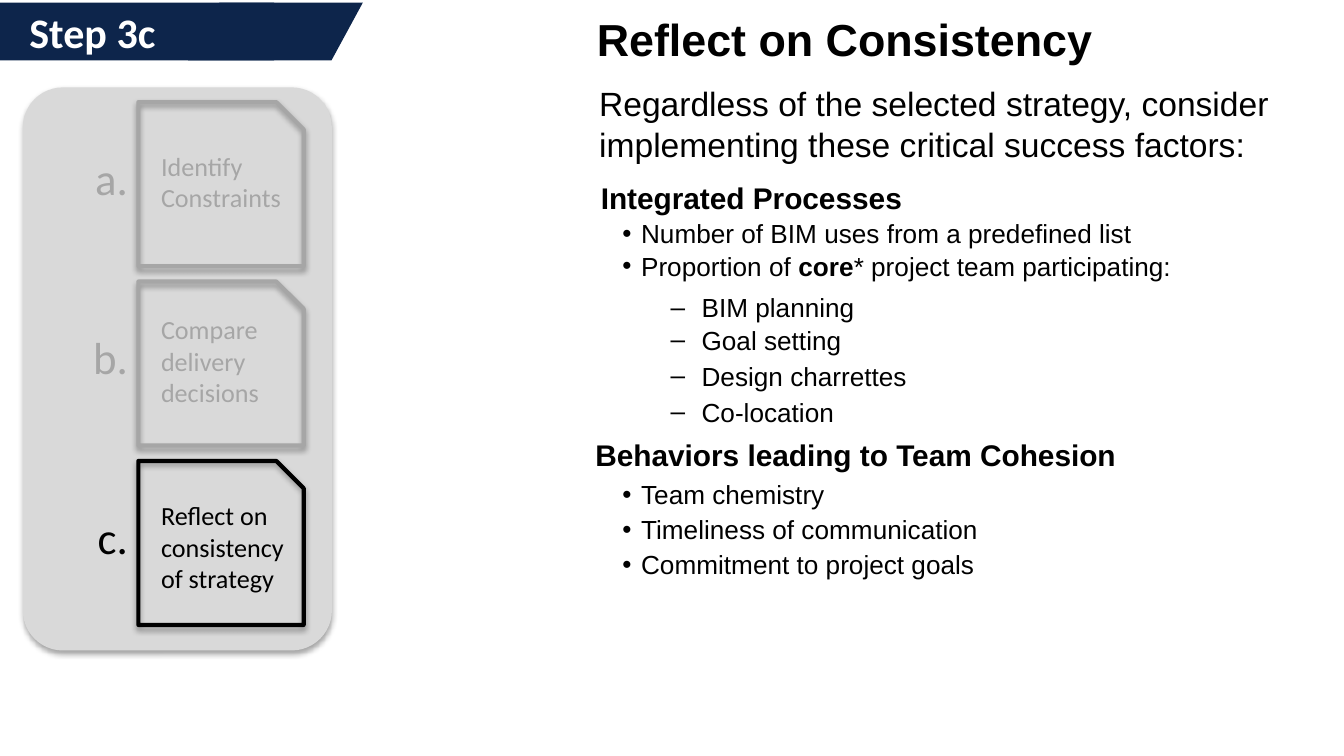
import collections
import dataclasses

import pptx
import pptx.dml.color
import pptx.enum.shapes
import pptx.enum.text
import pptx.oxml
import pptx.oxml.ns
import pptx.util
from pptx.util import Inches

SHAPE = pptx.enum.shapes.MSO_SHAPE
ALIGN = pptx.enum.text.PP_ALIGN
Box = collections.namedtuple("Box", "left top width height")


@dataclasses.dataclass(frozen=True)
class Theme:
    navy: str = "0D254B"
    white: str = "FFFFFF"
    black: str = "000000"
    panel: str = "D9D9D9"
    muted: str = "A6A6A6"
    content_font: str = "Arial"
    step_font: str = "Calibri"
    title: float = 24
    banner: float = 22.5
    intro: float = 18
    heading: float = 16
    small: float = 14
    outline: float = 2.25


THEME = Theme()


def rgb(value):
    return pptx.dml.color.RGBColor.from_string(value)


def inside(box, left, top, width, height):
    """Turn a position relative to box into one on the slide."""
    return Box(box.left + left, box.top + top, width, height)


def place(holder, box):
    holder.left, holder.top, holder.width, holder.height = map(Inches, box)


def write(paragraph, text, *, size, font=THEME.content_font, color=THEME.black,
          bold=False, align=ALIGN.LEFT, before=0, bullet=None, margin=0, hang=0):
    """Format a paragraph; parts of text between ** marks are bold."""
    properties = paragraph._p.get_or_add_pPr()
    properties.set("marL", str(Inches(margin)))
    properties.set("indent", str(-Inches(hang)))
    mark = f'a:buChar {pptx.oxml.ns.nsdecls("a")} char="{bullet}"' if bullet \
        else f'a:buNone {pptx.oxml.ns.nsdecls("a")}'
    properties.append(pptx.oxml.parse_xml(f"<{mark}/>"))
    paragraph.alignment = align
    paragraph.line_spacing = 1.0
    paragraph.space_before = pptx.util.Pt(before)
    paragraph.space_after = pptx.util.Pt(0)
    for number, part in enumerate(text.split("**")):
        run = paragraph.add_run()
        run.text = part
        run.font.name = font
        run.font.size = pptx.util.Pt(size)
        run.font.bold = bold or number % 2 == 1
        run.font.color.rgb = rgb(color)


def prepare(frame, wrap=True):
    frame.word_wrap = wrap
    frame.auto_size = pptx.enum.text.MSO_AUTO_SIZE.NONE
    frame.vertical_anchor = pptx.enum.text.MSO_ANCHOR.TOP
    return frame.paragraphs[0]


def add_text(slide, box, text, **style):
    holder = slide.shapes.add_textbox(*map(Inches, box))
    write(prepare(holder.text_frame), text, **style)


def fill_holder(holder, box, text, **style):
    place(holder, box)
    write(prepare(holder.text_frame, wrap=False), text, **style)


def add_panel(slide, kind, box, fill=None, line=None, adjust=None, shadow=False):
    shape = slide.shapes.add_shape(kind, *map(Inches, box))
    shape.shadow.inherit = False
    if fill:
        shape.fill.solid()
        shape.fill.fore_color.rgb = rgb(fill)
    else:
        shape.fill.background()
    if line:
        shape.line.color.rgb = rgb(line)
        shape.line.width = pptx.util.Pt(THEME.outline)
    else:
        shape.line.fill.background()
    if adjust is not None:
        shape.adjustments[0] = adjust
    if shadow:
        effects = shape._element.spPr.find(pptx.oxml.ns.qn("a:effectLst"))
        effects.append(pptx.oxml.parse_xml(
            f'<a:outerShdw {pptx.oxml.ns.nsdecls("a")} blurRad="{pptx.util.Pt(3.1)}" '
            f'dist="{pptx.util.Pt(1.8)}" dir="5400000" rotWithShape="0">'
            '<a:srgbClr val="000000"><a:alpha val="35000"/></a:srgbClr></a:outerShdw>'))


def add_banner(slide, box, text):
    add_panel(slide, SHAPE.RECTANGLE, inside(box, 0, 0, 2.04, box.height), THEME.navy)
    add_panel(slide, SHAPE.PARALLELOGRAM,
              inside(box, box.width - 1.3, 0, 1.3, box.height), THEME.navy, adjust=0.543)
    add_text(slide, inside(box, 0.12, -0.02, 2.05, 0.48), text, size=THEME.banner,
             font=THEME.step_font, color=THEME.white, bold=True)


def add_steps(slide, box, steps, current):
    """Stack one card per (letter, label, label offset) and highlight the current one."""
    add_panel(slide, SHAPE.ROUNDED_RECTANGLE, box, THEME.panel, adjust=0.13, shadow=True)
    card_height, top_gap, bottom_gap = 1.22, 0.11, 0.19
    pitch = (box.height - top_gap - bottom_gap - card_height) / (len(steps) - 1)
    for row, (letter, label, label_top) in enumerate(steps):
        card = inside(box, 0.86, top_gap + row * pitch, 1.23, card_height)
        color = THEME.black if letter == current else THEME.muted
        style = dict(font=THEME.step_font, color=color)
        add_panel(slide, SHAPE.SNIP_1_RECTANGLE, card, line=color, shadow=True)
        add_text(slide, inside(card, 0.07, label_top, 1.2, 0.81), label,
                 size=THEME.small, **style)
        add_text(slide, inside(card, -0.7, 0.31, 0.72, 0.5), letter,
                 size=THEME.title, align=ALIGN.RIGHT, **style)


def fill_section(heading_holder, list_holder, box, heading, items, list_top):
    """Place a heading and its list of (level, space before, text)."""
    fill_holder(heading_holder, inside(box, 0, 0, box.width, 0.37), heading,
                size=THEME.heading, bold=True)
    place(list_holder, Box(4.53, box.top + list_top, 5.34, box.height - list_top))
    frame = list_holder.text_frame
    paragraph = prepare(frame)
    levels = (dict(bullet="•", margin=0.14, hang=0.14),
              dict(bullet="–", margin=0.59, hang=0.23))
    for number, (level, before, text) in enumerate(items):
        if number:
            paragraph = frame.add_paragraph()
        paragraph.level = level
        write(paragraph, text, size=THEME.small, before=before, **levels[level])


def main():
    deck = pptx.Presentation()
    deck.slide_width = Inches(10)
    deck.slide_height = deck.slide_width * 9 // 16
    slide = deck.slides.add_slide(deck.slide_layouts.get_by_name("Comparison"))
    title, *sections = [h for h in slide.placeholders if h.placeholder_format.idx < 10]

    fill_holder(title, Box(4.34, 0.04, 3.92, 0.5), "Reflect on Consistency",
                size=THEME.title, bold=True)
    add_text(slide, Box(4.36, 0.57, 5.24, 0.71),
             "Regardless of the selected strategy, consider implementing "
             "these critical success factors:", size=THEME.intro)
    fill_section(*sections[:2], Box(4.37, 1.29, 2.47, 1.95), "Integrated Processes", [
        (0, 0, "Number of BIM uses from a predefined list"),
        (0, 0.5, "Proportion of **core*** project team participating:"),
        (1, 5.5, "BIM planning"),
        (1, 0.5, "Goal setting"),
        (1, 2.5, "Design charrettes"),
        (1, 2.5, "Co-location"),
    ], list_top=0.28)
    fill_section(*sections[2:], Box(4.33, 3.2, 4.12, 1.17),
                 "Behaviors leading to Team Cohesion", [
        (0, 0, "Team chemistry"),
        (0, 2, "Timeliness of communication"),
        (0, 2, "Commitment to project goals"),
    ], list_top=0.31)
    add_banner(slide, Box(0, 0.02, 2.7, 0.43), "Step 3c")
    add_steps(slide, Box(0.17, 0.65, 2.3, 4.19), [
        ("a.", "Identify Constraints", 0.31),
        ("b.", "Compare delivery decisions", 0.19),
        ("c.", "Reflect on consistency of strategy", 0.24),
    ], current="c.")
    deck.save("out.pptx")


if __name__ == "__main__":
    main()
